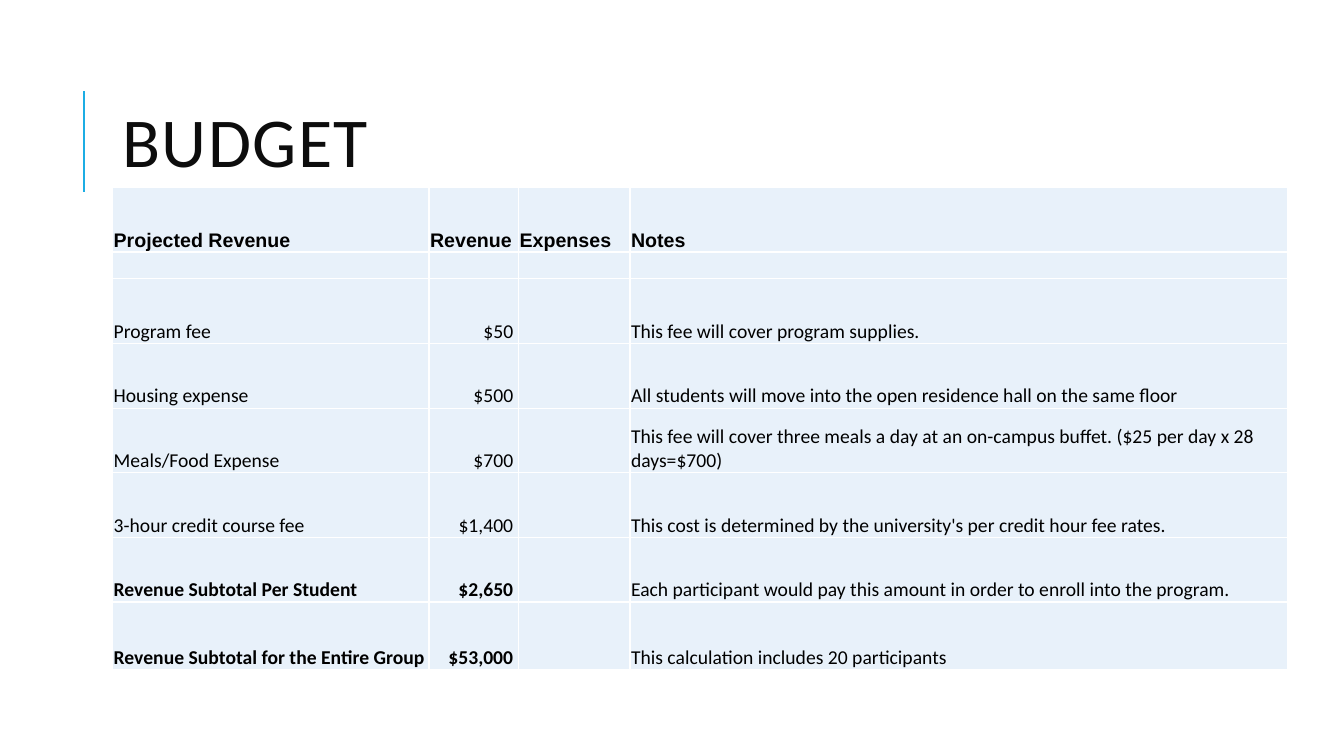
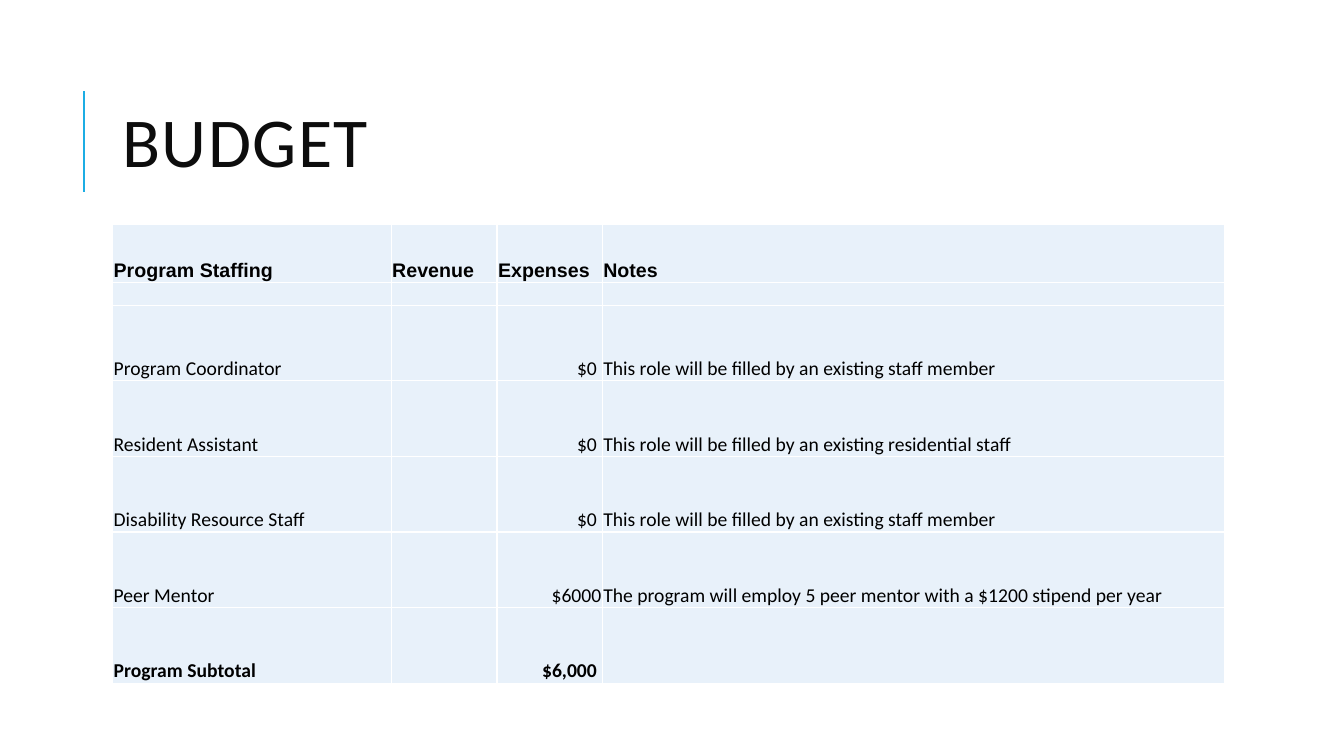
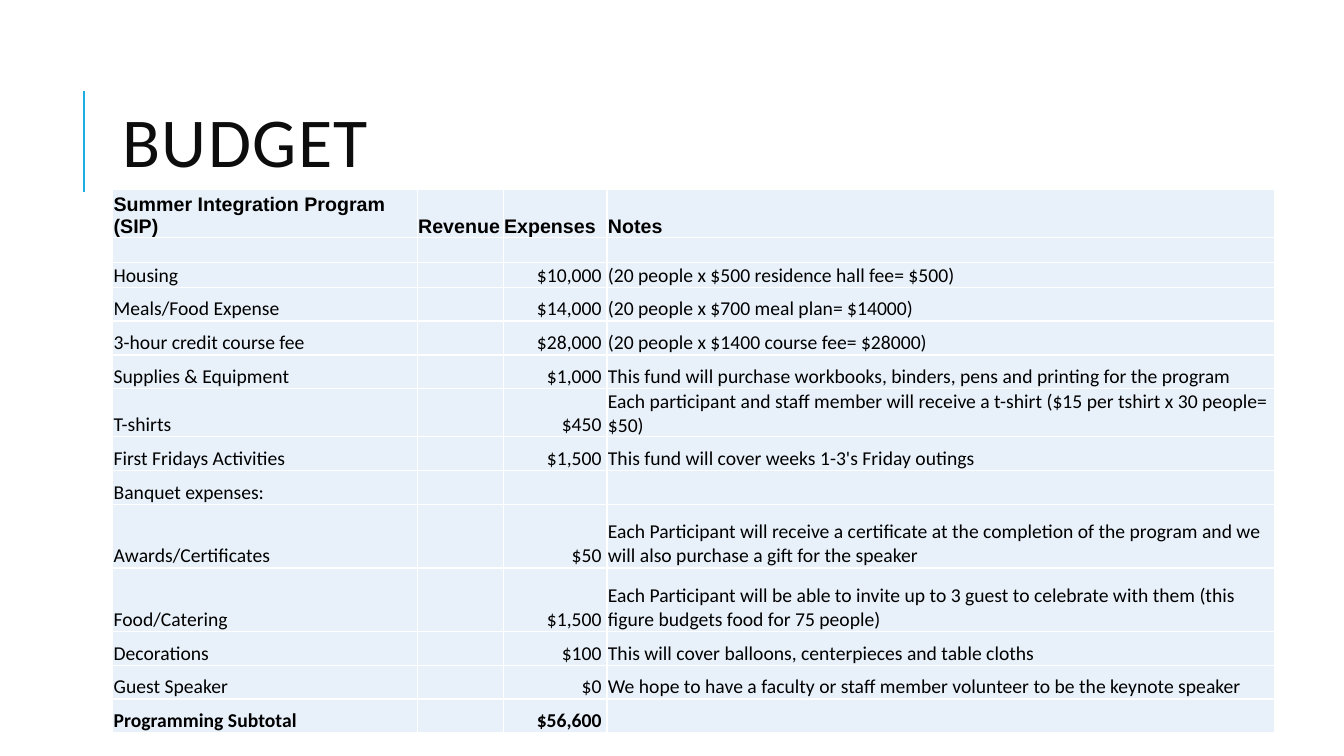
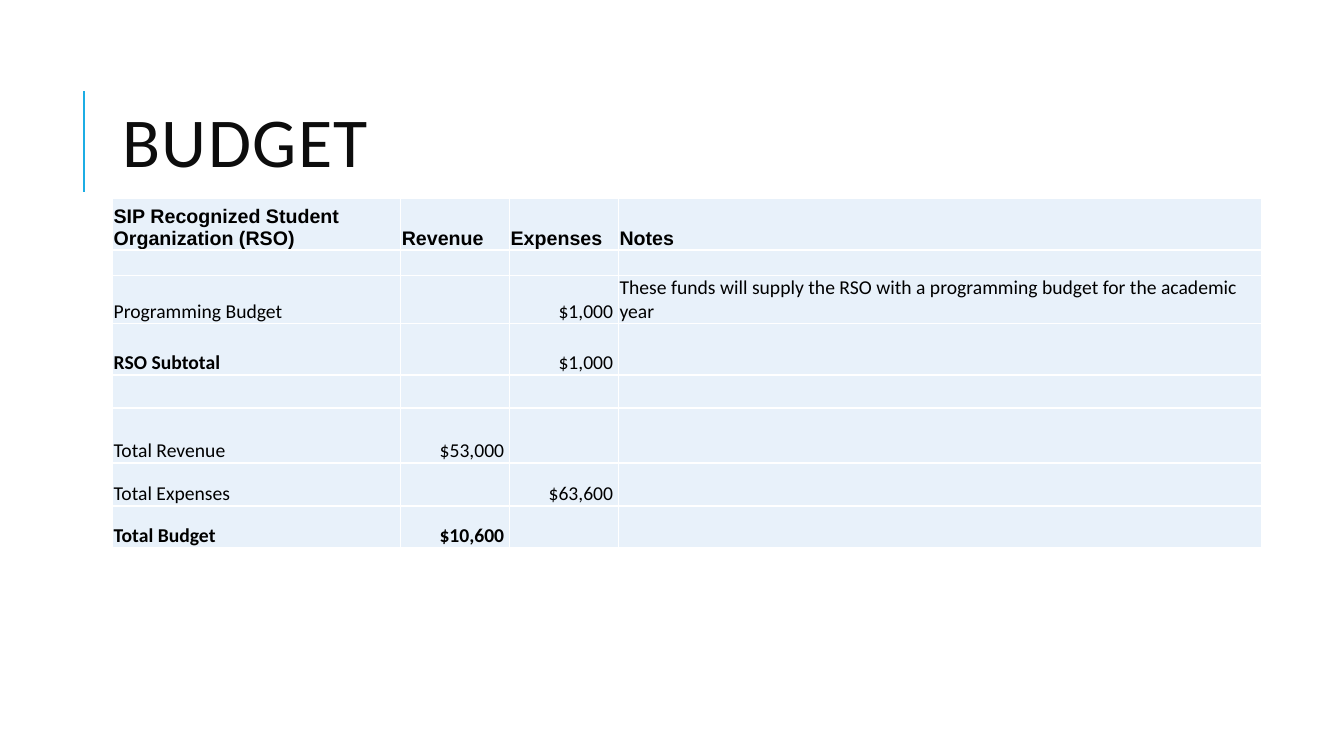
from lxml import etree
from pptx import Presentation
from pptx.dml.color import RGBColor
from pptx.enum.shapes import MSO_CONNECTOR
from pptx.enum.text import MSO_ANCHOR, PP_ALIGN
from pptx.oxml.ns import qn
from pptx.util import Pt

STRAIGHT = MSO_CONNECTOR.STRAIGHT
MIDDLE, BOTTOM = MSO_ANCHOR.MIDDLE, MSO_ANCHOR.BOTTOM
LEFT, RIGHT = PP_ALIGN.LEFT, PP_ALIGN.RIGHT

BLUE = RGBColor(0x1C, 0xAD, 0xE4)
PALE = RGBColor(0xE8, 0xF1, 0xFA)
INK = RGBColor(0x0D, 0x0D, 0x0D)
BLACK = RGBColor(0, 0, 0)
WHITE = RGBColor(0xFF, 0xFF, 0xFF)

TITLE = {"name": "Calibri", "size": Pt(50)}
HEAD = {"name": "Arial", "size": Pt(14), "bold": True}
BODY = {"name": "Calibri", "size": Pt(14), "bold": False}
STRONG = {**BODY, "bold": True}
INSET = {"margin_left": Pt(0.7), "margin_right": Pt(0.7),
         "margin_top": Pt(0.7), "margin_bottom": 0,
         "vertical_anchor": BOTTOM}

TABLE_X = 80.5
HEADS = ("Revenue", "Expenses", "Notes")
BLANK = ("", "", "", "")

# A leading * marks a bold cell.
BUDGETS = [
    {
        "top": 134,
        "cols": [226, 64, 79.6, 469.8],
        "heights": [46, 19.2] + [46.2] * 5 + [48.6],
        "rows": [
            ("Projected Revenue", *HEADS),
            BLANK,
            ("Program fee", "$50 ", "",
             "This fee will cover program supplies."),
            ("Housing expense", "$500 ", "",
             "All students will move into the open residence hall on the same floor"),
            ("Meals/Food Expense", "$700 ", "",
             "This fee will cover three meals a day at an on-campus buffet. "
             "($25 per day x 28 days=$700)"),
            ("3-hour credit course fee", "$1,400 ", "",
             "This cost is determined by the university's per credit hour fee rates."),
            ("*Revenue Subtotal Per Student", "*$2,650 ", "",
             "Each participant would pay this amount in order to enroll into the program."),
            ("*Revenue Subtotal for the Entire Group", "*$53,000 ", "",
             "This calculation includes 20 participants"),
        ],
    },
    {
        "top": 160,
        "cols": [199, 75.6, 75.2, 444.4],
        "heights": [41.6, 16.4] + [54] * 5,
        "rows": [
            ("Program Staffing", *HEADS),
            BLANK,
            ("Program Coordinator", "", "$0 ",
             "This role will be filled by an existing staff member"),
            ("Resident Assistant", "", "$0 ",
             "This role will be filled by an existing residential staff"),
            ("Disability Resource Staff", "", "$0 ",
             "This role will be filled by an existing staff member"),
            ("Peer Mentor", "", "$6000",
             "The program will employ 5 peer mentor with a $1200 stipend per year"),
            ("*Program Subtotal", "", "*$6,000 ", ""),
        ],
    },
    {
        "top": 135.5,
        "cols": [217.5, 61.4, 74.2, 476.6],
        "heights": [32, 17.8, 17.6, 24.2, 24.2, 24.2, 34.3, 24.2, 24.2,
                    45.3, 45.3, 24.2, 24.2, 24.2],
        "rows": [
            ("Summer Integration Program (SIP)", *HEADS),
            BLANK,
            ("Housing", "", "$10,000 ",
             "(20 people x $500 residence hall fee= $500)"),
            ("Meals/Food Expense", "", "$14,000 ",
             "(20 people x $700 meal plan= $14000)"),
            ("3-hour credit course fee", "", "$28,000 ",
             "(20 people x $1400 course fee= $28000)"),
            ("Supplies & Equipment", "", "$1,000 ",
             "This fund will purchase workbooks, binders, pens and printing for the program"),
            ("T-shirts", "", "$450 ",
             "Each participant and staff member will receive a t-shirt "
             "($15 per tshirt x 30 people= $50)"),
            ("First Fridays Activities", "", "$1,500 ",
             "This fund will cover weeks 1-3's Friday outings"),
            ("Banquet expenses:", "", "", ""),
            ("Awards/Certificates", "", "$50 ",
             "Each Participant will receive a certificate at the completion of the "
             "program and we will also purchase a gift for the speaker"),
            ("Food/Catering", "", "$1,500 ",
             "Each Participant will be able to invite up to 3 guest to celebrate "
             "with them (this figure budgets food for 75 people)"),
            ("Decorations", "", "$100 ",
             "This will cover balloons, centerpieces and table cloths"),
            ("Guest Speaker", "", "$0 ",
             "We hope to have a faculty or staff member volunteer to be the keynote speaker"),
            ("*Programming Subtotal", "", "*$56,600 ", ""),
        ],
    },
    {
        "top": 142,
        "cols": [205.8, 77.8, 77.8, 459.6],
        "heights": [36.6, 18, 34.3, 37, 23.6, 39.2, 30.8, 29.8],
        "rows": [
            ("SIP Recognized Student Organization (RSO)", *HEADS),
            BLANK,
            ("Programming Budget", "", "$1,000 ",
             "These funds will supply the RSO with a programming budget for the academic year"),
            ("*RSO Subtotal", "", "$1,000 ", ""),
            BLANK,
            ("Total Revenue", "$53,000 ", "", ""),
            ("Total Expenses", "", "$63,600 ", ""),
            ("*Total Budget", "*$10,600 ", "", ""),
        ],
    },
]


def style(item, form):
    for key, value in form.items():
        setattr(item, key, value)


def add_run(para, text, form, color):
    run = para.add_run()
    run.text = text
    style(run.font, form)
    run.font.color.rgb = color
    return run


def add_title(slide):
    """Draw the accent bar and the heading that every slide has."""
    bar = slide.shapes.add_connector(STRAIGHT, Pt(60), Pt(136.8), Pt(60), Pt(64.8))
    bar.line.color.rgb = BLUE
    bar.line.width = Pt(1.5)
    etree.SubElement(bar._element.spPr, qn("a:effectLst"))

    box = slide.shapes.add_textbox(Pt(TABLE_X), Pt(46), Pt(765), Pt(118))
    frame = box.text_frame
    frame.word_wrap = True
    frame.vertical_anchor = MIDDLE
    para = frame.paragraphs[0]
    para.line_spacing = 0.8
    run = add_run(para, "BUDGET", TITLE, INK)
    run.font._element.set("spc", "100")


def add_edges(cell):
    """Put a white line on all four sides; lines go before the fill."""
    props = cell._tc.get_or_add_tcPr()
    for spot, side in enumerate(("lnL", "lnR", "lnT", "lnB")):
        line = etree.Element(qn("a:" + side), w=str(Pt(1)))
        fill = etree.SubElement(line, qn("a:solidFill"))
        etree.SubElement(fill, qn("a:srgbClr"), val=str(WHITE))
        props.insert(spot, line)


def fill_cell(cell, text, head):
    style(cell, INSET)
    cell.fill.solid()
    cell.fill.fore_color.rgb = PALE
    add_edges(cell)
    para = cell.text_frame.paragraphs[0]
    if not text:
        # A small end mark keeps an empty row from growing.
        etree.SubElement(para._p, qn("a:endParaRPr"), sz="1000")
        return
    form = HEAD if head else STRONG if text.startswith("*") else BODY
    text = text.removeprefix("*")
    para.alignment = RIGHT if text.startswith("$") else LEFT
    add_run(para, text, form, BLACK)


def add_budget(slide, top, cols, heights, rows):
    table = slide.shapes.add_table(
        len(rows), len(cols), Pt(TABLE_X), Pt(top),
        Pt(sum(cols)), Pt(sum(heights))).table
    style(table, {"first_row": False, "horz_banding": False})
    for col, width in zip(table.columns, cols):
        col.width = Pt(width)
    for r, (row, height) in enumerate(zip(rows, heights)):
        table.rows[r].height = Pt(height)
        for c, text in enumerate(row):
            fill_cell(table.cell(r, c), text, r == 0)


def main():
    deck = Presentation()
    deck.slide_width, deck.slide_height = Pt(960), Pt(540)
    for budget in BUDGETS:
        slide = deck.slides.add_slide(deck.slide_layouts[6])
        add_title(slide)
        add_budget(slide, **budget)
    deck.save("out.pptx")


if __name__ == "__main__":
    main()
